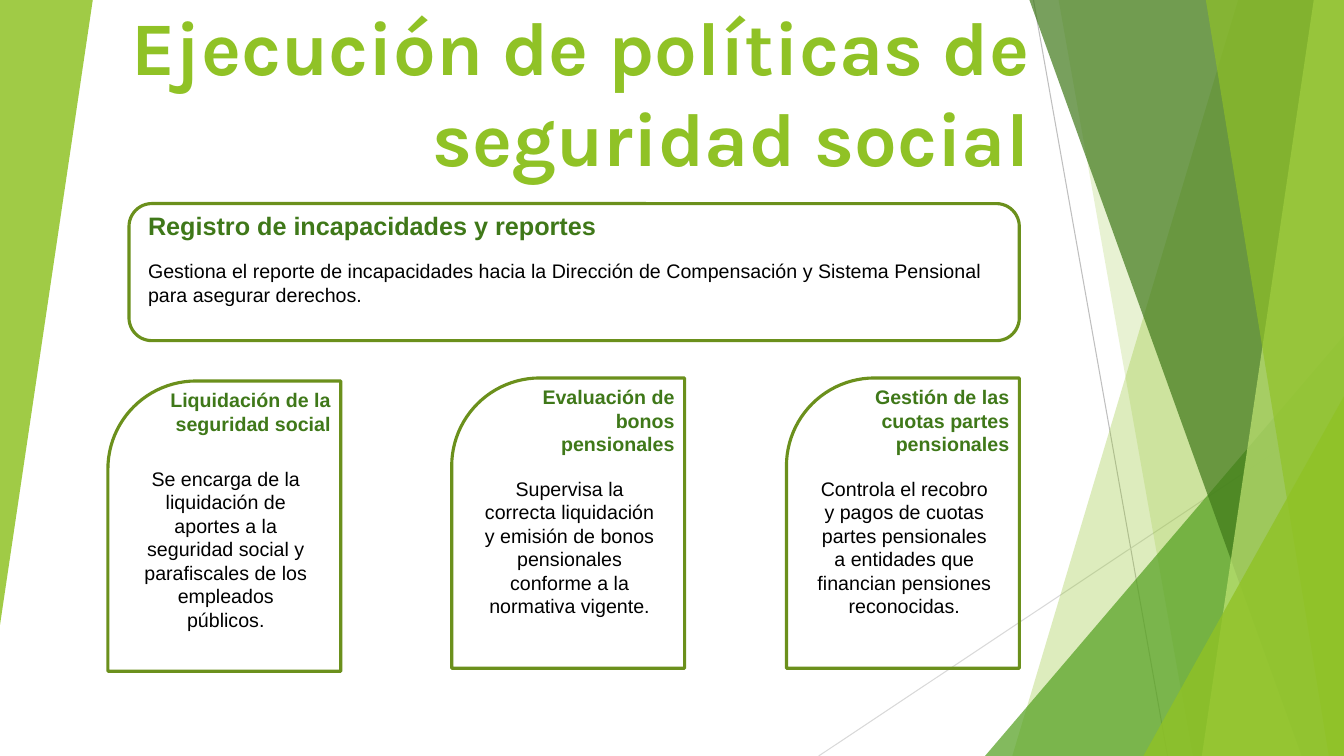
import pptx
import pptx.util
import pptx.dml.color
import pptx.enum.shapes
import pptx.enum.text
import pptx.oxml.ns
import lxml.etree
from dataclasses import dataclass

Inches = pptx.util.Inches
Shape = pptx.enum.shapes.MSO_SHAPE
Align = pptx.enum.text.PP_ALIGN
Anchor = pptx.enum.text.MSO_ANCHOR


@dataclass(frozen=True)
class Theme:
    lime: str = "90C226"
    pale: str = "C0E474"
    green: str = "54A021"
    forest: str = "3F7819"
    outline: str = "6B901C"
    ink: str = "000000"
    font: str = "Arial"
    title_font: str = "Karla"
    title_size: int = 54
    heading_size: int = 18
    body_size: int = 14


theme = Theme()


def write(text, holder, size=theme.body_size, color=theme.ink, font=theme.font,
          bold=False, align=Align.LEFT, anchor=Anchor.TOP):
    frame = holder.text_frame
    frame.word_wrap = True
    frame.auto_size = pptx.enum.text.MSO_AUTO_SIZE.NONE
    frame.vertical_anchor = anchor
    paragraph = frame.paragraphs[0]
    paragraph.alignment = align
    run = paragraph.add_run()
    run.text = text
    run.font.size = pptx.util.Pt(size)
    run.font.name = font
    run.font.bold = bold
    run.font.color.rgb = pptx.dml.color.RGBColor.from_string(color)


def paint(shape, fill=None, opacity=100):
    shape.shadow.inherit = False
    if fill:
        shape.fill.solid()
        shape.fill.fore_color.rgb = pptx.dml.color.RGBColor.from_string(fill)
        shape.line.fill.background()
        tint = shape.fill._xPr.find(".//" + pptx.oxml.ns.qn("a:srgbClr"))
        lxml.etree.SubElement(tint, pptx.oxml.ns.qn("a:alpha"), val=str(opacity * 1000))
    else:
        shape.fill.background()
        shape.line.color.rgb = pptx.dml.color.RGBColor.from_string(theme.outline)
        shape.line.width = pptx.util.Pt(2.25)


deck = pptx.Presentation()
deck.slide_width = Inches(13.33)
deck.slide_height = Inches(7.5)
slide = deck.slides.add_slide(deck.slide_layouts[5])
shapes = slide.shapes

for x1, y1, x2, y2, gray in [(10.25, 0, 11.58, 7.5, "BFBFBF"), (13.33, 4.03, 8.12, 7.5, "D9D9D9")]:
    ray = shapes.add_connector(pptx.enum.shapes.MSO_CONNECTOR.STRAIGHT,
                               Inches(x1), Inches(y1), Inches(x2), Inches(y2))
    ray.line.color.rgb = pptx.dml.color.RGBColor.from_string(gray)
    ray.line.width = pptx.util.Pt(0.75)
    lxml.etree.SubElement(ray._element.spPr, pptx.oxml.ns.qn("a:effectLst"))

facets = [
    ("band", 12.28, 10.04, theme.lime, 30),
    ("band", 10.5, 11.83, theme.lime, 20),
    ("peak", 9.77, 3.33, theme.green, 72),
    ("band", 10.21, 12.91, theme.forest, 70),
    ("band", 13.03, 11.92, theme.pale, 70),
    ("band", 11.96, 13.18, theme.lime, 65),
    ("peak", 11.34, 3.93, theme.lime, 80),
]
for kind, start, end, color, opacity in facets:
    if kind == "band":
        outline = shapes.build_freeform(Inches(start), 0)
        outline.add_line_segments([(Inches(13.33), 0), (Inches(13.33), Inches(7.5)),
                                   (Inches(end), Inches(7.5))], close=True)
        facet = outline.convert_to_shape()
    else:
        facet = shapes.add_shape(Shape.ISOSCELES_TRIANGLE, Inches(start), Inches(end),
                                 Inches(13.33 - start), Inches(7.5 - end))
        facet.adjustments[0] = 1
    paint(facet, color, opacity)

left_wedge = shapes.add_shape(Shape.ISOSCELES_TRIANGLE, 0, 0, Inches(0.92), Inches(6.2))
left_wedge.adjustments[0] = 1
left_wedge.rotation = 180
paint(left_wedge, theme.lime, 85)

title = shapes.title
title.left, title.top, title.width, title.height = Inches(0.69), Inches(0), Inches(9.62), Inches(1.8)
title.text_frame.margin_top = title.text_frame.margin_bottom = 0
write("Ejecución de políticas de seguridad social", title, size=theme.title_size,
      color=theme.lime, font=theme.title_font, bold=True, align=Align.RIGHT, anchor=Anchor.BOTTOM)

registry = shapes.add_shape(Shape.ROUNDED_RECTANGLE, Inches(1.28), Inches(2.02), Inches(8.83), Inches(1.36))
paint(registry)
write("Registro de incapacidades y reportes",
      shapes.add_textbox(Inches(1.37), Inches(2.04), Inches(4.97), Inches(0.4)),
      size=theme.heading_size, color=theme.forest, bold=True)
write("Gestiona el reporte de incapacidades hacia la Dirección de Compensación y Sistema Pensional "
      "para asegurar derechos.",
      shapes.add_textbox(Inches(1.37), Inches(2.52), Inches(8.65), Inches(0.88)))

duties = [
    (1.07, 3.78, 4.58, "Liquidación de la seguridad social",
     "Se encarga de la liquidación de aportes a la seguridad social y parafiscales de los empleados públicos."),
    (4.48, 3.75, 4.68, "Evaluación de bonos pensionales",
     "Supervisa la correcta liquidación y emisión de bonos pensionales conforme a la normativa vigente."),
    (7.8, 3.75, 4.68, "Gestión de las cuotas partes pensionales",
     "Controla el recobro y pagos de cuotas partes pensionales a entidades que financian pensiones reconocidas."),
]
for left, top, detail_top, heading, detail in duties:
    card = shapes.add_shape(Shape.SNIP_ROUND_RECTANGLE, Inches(left), Inches(top), Inches(2.31), Inches(2.88))
    card.adjustments[0] = 0.378
    card.adjustments[1] = 0
    paint(card)
    write(heading, shapes.add_textbox(Inches(left + 0.46), Inches(top + 0.02), Inches(1.85), Inches(0.81)),
          color=theme.forest, bold=True, align=Align.RIGHT)
    write(detail, shapes.add_textbox(Inches(left + 0.2), Inches(detail_top), Inches(1.94), Inches(1.75)),
          align=Align.CENTER)

deck.save("out.pptx")
